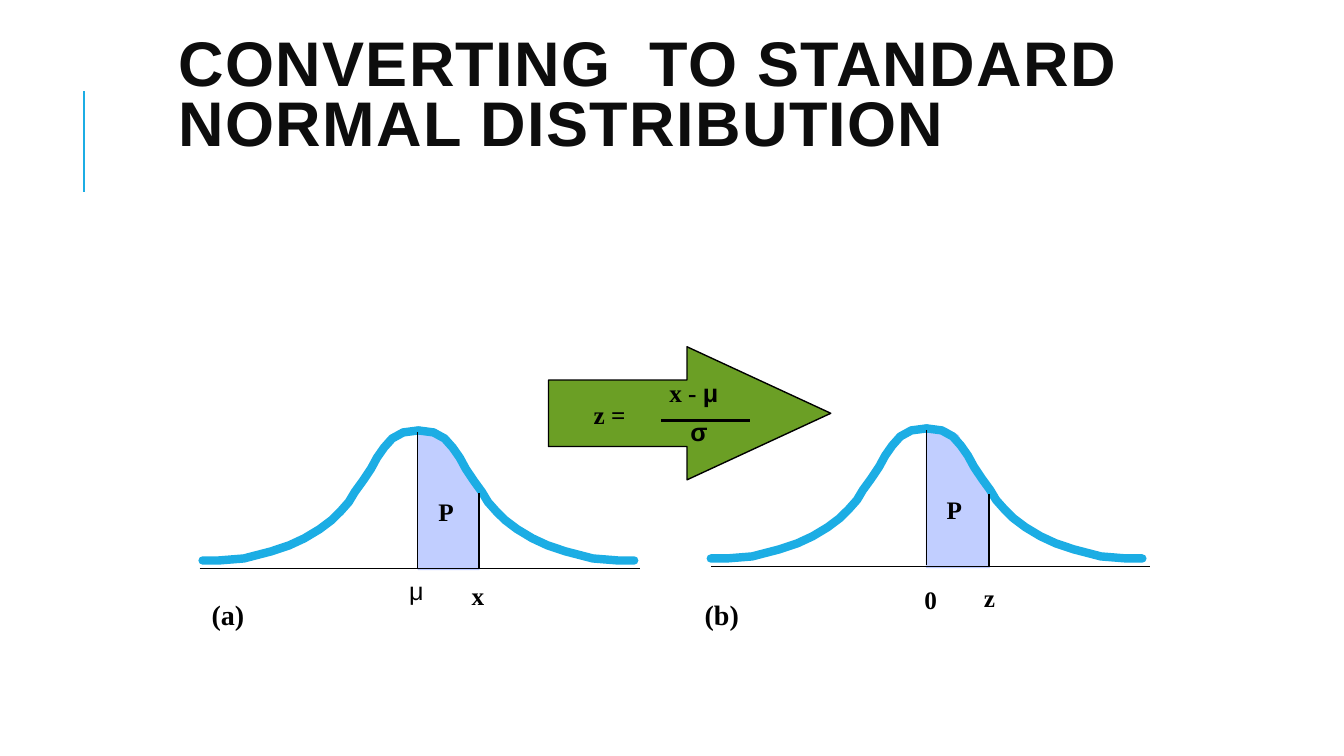
from dataclasses import dataclass

from lxml import etree
from pptx import Presentation
from pptx.dml.color import RGBColor
from pptx.enum.shapes import MSO_CONNECTOR as Connector
from pptx.enum.shapes import MSO_SHAPE as Preset
from pptx.enum.text import MSO_ANCHOR as Anchor
from pptx.enum.text import MSO_AUTO_SIZE as AutoSize
from pptx.oxml.ns import qn
from pptx.shapes.autoshape import Shape
from pptx.slide import Slide
from pptx.util import Inches, Pt

WHITE = RGBColor(0xFF, 0xFF, 0xFF)
BLACK = RGBColor(0x00, 0x00, 0x00)
TITLE_BLACK = RGBColor(0x0D, 0x0D, 0x0D)
CURVE_BLUE = RGBColor(0x1C, 0xAD, 0xE4)
AREA_BLUE = RGBColor(0xC1, 0xCE, 0xFF)
ARROW_GREEN = RGBColor(0x6B, 0x9F, 0x25)

SERIF = "Times New Roman"
SANS = "Arial"

Point = tuple[float, float]

HALF_BELL: list[Point] = [
    (2.14, 1.29), (1.98, 1.29), (1.73, 1.27), (1.46, 1.2), (1.28, 1.14), (1.13, 1.07),
    (0.98, 0.98), (0.86, 0.89), (0.77, 0.8), (0.69, 0.71), (0.63, 0.61), (0.55, 0.5),
    (0.47, 0.38), (0.41, 0.27), (0.34, 0.17), (0.26, 0.08), (0.15, 0.02), (0, 0),
]


@dataclass(frozen=True)
class Rule:
    start: Point
    end: Point
    color: RGBColor = BLACK
    width: float = 1


@dataclass(frozen=True)
class Label:
    text: str
    left: float
    top: float
    width: float
    height: float = 0.4
    size: float = 18
    fonts: tuple[str, ...] = (SERIF,)
    bold: bool = True
    spacing: float = 1.0


@dataclass(frozen=True)
class Bell:
    peak: Point
    area: list[Point]
    rules: list[Rule]


BELLS = [
    Bell(
        (4.15, 4.27),
        [(4.74, 4.88), (4.75, 5.65), (4.15, 5.65), (4.15, 4.25), (4.31, 4.29),
         (4.44, 4.36), (4.72, 4.83)],
        [Rule((1.98, 5.64), (6.35, 5.64)), Rule((4.14, 4.29), (4.14, 5.64)),
         Rule((4.75, 5.64), (4.75, 4.89))],
    ),
    Bell(
        (9.19, 4.25),
        [(9.81, 4.94), (9.81, 5.63), (9.19, 5.63), (9.19, 4.25), (9.38, 4.25),
         (9.5, 4.32)],
        [Rule((7.05, 5.62), (11.41, 5.62)), Rule((9.19, 4.27), (9.19, 5.61)),
         Rule((9.81, 4.9), (9.81, 5.62))],
    ),
]

TITLE_RULE = Rule((0.83, 1.9), (0.83, 0.9), CURVE_BLUE, 1.5)
FRACTION_BAR = Rule((6.56, 4.17), (7.44, 4.17), width=2)

LABELS = [
    Label("x", 4.58, 5.74, 0.35, 0.38, spacing=0.9),
    Label("0", 9.07, 5.78, 0.32, 0.37, spacing=0.9),
    Label("μ", 3.96, 5.66, 0.35, fonts=(SANS,), bold=False),
    Label("z", 9.66, 5.76, 0.32, 0.37, spacing=0.9),
    Label("σ", 6.75, 4.08, 0.35, fonts=(SANS,)),
    Label("z =", 5.79, 3.91, 0.54),
    Label("(a)", 2, 5.88, 0.53, 0.44, size=20),
    Label("(b)", 6.89, 5.88, 0.55, 0.44, size=20),
    Label("P", 4.25, 4.87, 0.34),
    Label("P", 9.29, 4.85, 0.34),
]
NUMERATOR = Label("x - |μ", 6.54, 3.69, 0.69, fonts=(SERIF, SANS))


def add_rule(slide: Slide, rule: Rule) -> None:
    ends = [Inches(value) for value in (*rule.start, *rule.end)]
    connector = slide.shapes.add_connector(Connector.STRAIGHT, *ends)
    connector.line.color.rgb = rule.color
    connector.line.width = Pt(rule.width)
    etree.SubElement(connector.element.spPr, qn("a:effectLst"))


def add_outline(slide: Slide, points: list[Point], closed: bool) -> Shape:
    corners = [(Inches(x), Inches(y)) for x, y in points]
    builder = slide.shapes.build_freeform(*corners[0])
    builder.add_line_segments(corners[1:], close=closed)
    shape = builder.convert_to_shape()
    shape.shadow.inherit = False
    return shape


def add_area(slide: Slide, points: list[Point]) -> None:
    area = add_outline(slide, points, closed=True)
    area.fill.solid()
    area.fill.fore_color.rgb = AREA_BLUE
    area.line.color.rgb = AREA_BLUE
    area.line.width = Pt(1)


def add_curve(slide: Slide, peak: Point) -> None:
    for side in (-1, 1):
        points = [(peak[0] + side * x, peak[1] + y) for x, y in HALF_BELL]
        half = add_outline(slide, points, closed=False)
        half.fill.background()
        half.line.color.rgb = CURVE_BLUE
        half.line.width = Pt(6)
        outline = half.line._get_or_add_ln()
        outline.set("cap", "rnd")
        etree.SubElement(outline, qn("a:round"))


def add_label(slide: Slide, label: Label) -> None:
    box = slide.shapes.add_textbox(
        Inches(label.left), Inches(label.top), Inches(label.width), Inches(label.height))
    frame = box.text_frame
    frame.word_wrap = False
    frame.auto_size = AutoSize.SHAPE_TO_FIT_TEXT
    paragraph = frame.paragraphs[0]
    paragraph.line_spacing = label.spacing
    for text, font in zip(label.text.split("|"), label.fonts):
        run = paragraph.add_run()
        run.text = text
        run.font.name = font
        run.font.size = Pt(label.size)
        run.font.bold = label.bold
        run.font.color.rgb = BLACK


def add_title(slide: Slide) -> None:
    box = slide.shapes.add_textbox(Inches(1.67), Inches(0.06), Inches(9.92), Inches(1.83))
    frame = box.text_frame
    frame.word_wrap = True
    frame.vertical_anchor = Anchor.MIDDLE
    frame.text = "CONVERTING  TO STANDARD NORMAL DISTRIBUTION"
    paragraph = frame.paragraphs[0]
    paragraph.line_spacing = 0.8
    font = paragraph.runs[0].font
    font.name = SANS
    font.size = Pt(45)
    font.bold = True
    font.color.rgb = TITLE_BLACK
    paragraph.runs[0]._r.get_or_add_rPr().set("spc", "100")


def add_arrow(slide: Slide) -> None:
    arrow = slide.shapes.add_shape(
        Preset.RIGHT_ARROW, Inches(5.44), Inches(3.44), Inches(2.8), Inches(1.32))
    arrow.adjustments[0] = 0.5
    arrow.adjustments[1] = 1.08
    arrow.shadow.inherit = False
    arrow.fill.solid()
    arrow.fill.fore_color.rgb = ARROW_GREEN
    arrow.line.color.rgb = BLACK
    arrow.line.width = Pt(1)


def main() -> None:
    presentation = Presentation()
    presentation.slide_width = Inches(13.33)
    presentation.slide_height = Inches(7.5)
    slide = presentation.slides.add_slide(presentation.slide_layouts[6])
    slide.background.fill.solid()
    slide.background.fill.fore_color.rgb = WHITE
    add_rule(slide, TITLE_RULE)
    add_title(slide)
    add_arrow(slide)
    for bell in BELLS:
        add_area(slide, bell.area)
        add_curve(slide, bell.peak)
        for rule in bell.rules:
            add_rule(slide, rule)
    add_rule(slide, FRACTION_BAR)
    for label in [*LABELS, NUMERATOR]:
        add_label(slide, label)
    presentation.save("out.pptx")


if __name__ == "__main__":
    main()
